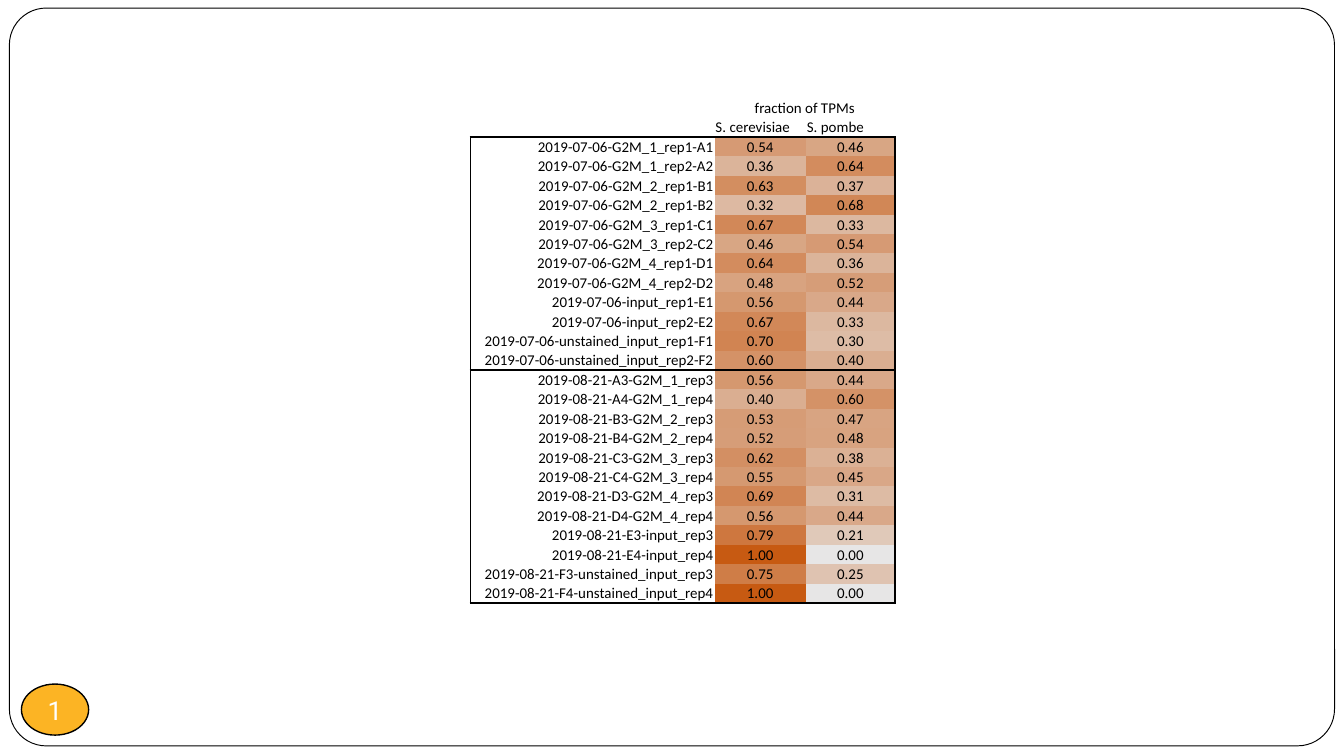
import dataclasses

import pptx
import pptx.dml.color
import pptx.enum.shapes
import pptx.enum.text
import pptx.oxml.ns
import pptx.util
from lxml import etree

Inches, Pt = pptx.util.Inches, pptx.util.Pt
RGB = pptx.dml.color.RGBColor
SHAPE = pptx.enum.shapes.MSO_SHAPE
ALIGN = pptx.enum.text.PP_ALIGN
ANCHOR = pptx.enum.text.MSO_ANCHOR
qn = pptx.oxml.ns.qn


@dataclasses.dataclass(frozen=True)
class Theme:
    ink: str = "000000"
    paper: str = "FFFFFF"
    badge: str = "FCB424"
    low: str = "E7E6E6"
    high: str = "C75A12"
    table_font: str = "Calibri"
    table_size: float = 8
    badge_font: str = "Roboto"
    badge_size: float = 14
    rule: float = 1
    inset: float = 0.5


T = Theme()
NO_STYLE = "{2D5ABB26-0587-4C30-8999-92F81FD0307C}"

# Sample name and its S. cerevisiae fraction; S. pombe has the rest
BATCHES = [
    [("2019-07-06-G2M_1_rep1-A1", 0.54), ("2019-07-06-G2M_1_rep2-A2", 0.36),
     ("2019-07-06-G2M_2_rep1-B1", 0.63), ("2019-07-06-G2M_2_rep1-B2", 0.32),
     ("2019-07-06-G2M_3_rep1-C1", 0.67), ("2019-07-06-G2M_3_rep2-C2", 0.46),
     ("2019-07-06-G2M_4_rep1-D1", 0.64), ("2019-07-06-G2M_4_rep2-D2", 0.48),
     ("2019-07-06-input_rep1-E1", 0.56), ("2019-07-06-input_rep2-E2", 0.67),
     ("2019-07-06-unstained_input_rep1-F1", 0.70),
     ("2019-07-06-unstained_input_rep2-F2", 0.60)],
    [("2019-08-21-A3-G2M_1_rep3", 0.56), ("2019-08-21-A4-G2M_1_rep4", 0.40),
     ("2019-08-21-B3-G2M_2_rep3", 0.53), ("2019-08-21-B4-G2M_2_rep4", 0.52),
     ("2019-08-21-C3-G2M_3_rep3", 0.62), ("2019-08-21-C4-G2M_3_rep4", 0.55),
     ("2019-08-21-D3-G2M_4_rep3", 0.69), ("2019-08-21-D4-G2M_4_rep4", 0.56),
     ("2019-08-21-E3-input_rep3", 0.79), ("2019-08-21-E4-input_rep4", 1.00),
     ("2019-08-21-F3-unstained_input_rep3", 0.75),
     ("2019-08-21-F4-unstained_input_rep4", 1.00)],
]


def write(tf, text, font, size, color, align=ALIGN.LEFT):
    p = tf.paragraphs[0]
    p.alignment = align
    if not text:
        # An empty cell still needs a small type size to keep its row low
        etree.SubElement(p._p, qn("a:endParaRPr"), sz=str(int(size * 100)))
        return
    r = p.add_run()
    r.text = text
    r.font.name = font
    r.font.size = Pt(size)
    r.font.color.rgb = RGB.from_string(color)


def add_outlined(s, kind, box, fill, width):
    sp = s.shapes.add_shape(kind, *map(Inches, box))
    sp.shadow.inherit = False
    sp.fill.solid()
    sp.fill.fore_color.rgb = RGB.from_string(fill)
    sp.line.color.rgb = RGB.from_string(T.ink)
    sp.line.width = Pt(width)
    return sp


def add_frame(s, box):
    sp = add_outlined(s, SHAPE.ROUNDED_RECTANGLE, box, T.paper, 0.5)
    sp.adjustments[0] = 0.05


def add_badge(s, box, text):
    sp = add_outlined(s, SHAPE.OVAL, box, T.badge, 0.75)
    tf = sp.text_frame
    tf.margin_left = tf.margin_right = tf.margin_top = tf.margin_bottom = 0
    tf.word_wrap = False
    tf.vertical_anchor = ANCHOR.MIDDLE
    write(tf, text, T.badge_font, T.badge_size, T.paper, ALIGN.CENTER)


def heat(value):
    """Colour on the straight scale from low (0) to high (1)."""
    low, high = RGB.from_string(T.low), RGB.from_string(T.high)
    return RGB(*(round(a + (b - a) * value) for a, b in zip(low, high)))


def format_cell(cell, text="", align=ALIGN.LEFT, fill=None, sides=""):
    cell.margin_left = cell.margin_right = cell.margin_top = Pt(T.inset)
    cell.margin_bottom = 0
    cell.vertical_anchor = ANCHOR.BOTTOM
    write(cell.text_frame, text, T.table_font, T.table_size, T.ink, align)
    tcPr = cell._tc.get_or_add_tcPr()
    for side in "LRTB":
        ln = etree.SubElement(tcPr, qn("a:ln" + side), w=str(Pt(T.rule)))
        if side in sides:
            solid = etree.SubElement(ln, qn("a:solidFill"))
            etree.SubElement(solid, qn("a:srgbClr"), val=T.ink)
        else:
            etree.SubElement(ln, qn("a:noFill"))
    if fill is None:
        cell.fill.background()
    else:
        cell.fill.solid()
        cell.fill.fore_color.rgb = fill


def add_heat_table(s, box, batches):
    x, y, w, h = box
    n_rows = 2 + sum(map(len, batches))
    frame = s.shapes.add_table(n_rows, 3, *map(Inches, box))
    table = frame.table
    table.first_row = table.horz_banding = False
    table._tbl.tblPr.find(qn("a:tableStyleId")).text = NO_STYLE
    for col, share in zip(table.columns, (0.575, 0.215, 0.21)):
        col.width = Inches(w * share)
    for row in table.rows:
        row.height = Inches(h / n_rows)

    # Header rows
    for c, text in enumerate(("", "fraction of TPMs", "")):
        format_cell(table.cell(0, c), text, ALIGN.CENTER)
    table.cell(0, 1).merge(table.cell(0, 2))
    for c, text in enumerate(("", "S. cerevisiae", "S. pombe")):
        format_cell(table.cell(1, c), text, sides="B")

    # Samples, with a rule around each batch
    i = 2
    for batch in batches:
        for k, (name, value) in enumerate(batch):
            ends = "T" * (k == 0) + "B" * (k == len(batch) - 1)
            format_cell(table.cell(i, 0), name, ALIGN.RIGHT, sides="L" + ends)
            for c, v, side in ((1, value, ""), (2, 1 - value, "R")):
                format_cell(table.cell(i, c), f"{v:.2f}", ALIGN.CENTER,
                            heat(v), side + ends)
            i += 1


def main():
    prs = pptx.Presentation()
    prs.slide_width = Inches(10)
    prs.slide_height = prs.slide_width * 9 // 16
    s = prs.slides.add_slide(prs.slide_layouts[6])
    add_frame(s, (0.07, 0.06, 9.86, 5.49))
    add_badge(s, (0.16, 5.09, 0.5, 0.38), "1")
    add_heat_table(s, (3.5, 0.73, 3.16, 3.76), BATCHES)
    prs.save("out.pptx")


if __name__ == "__main__":
    main()
